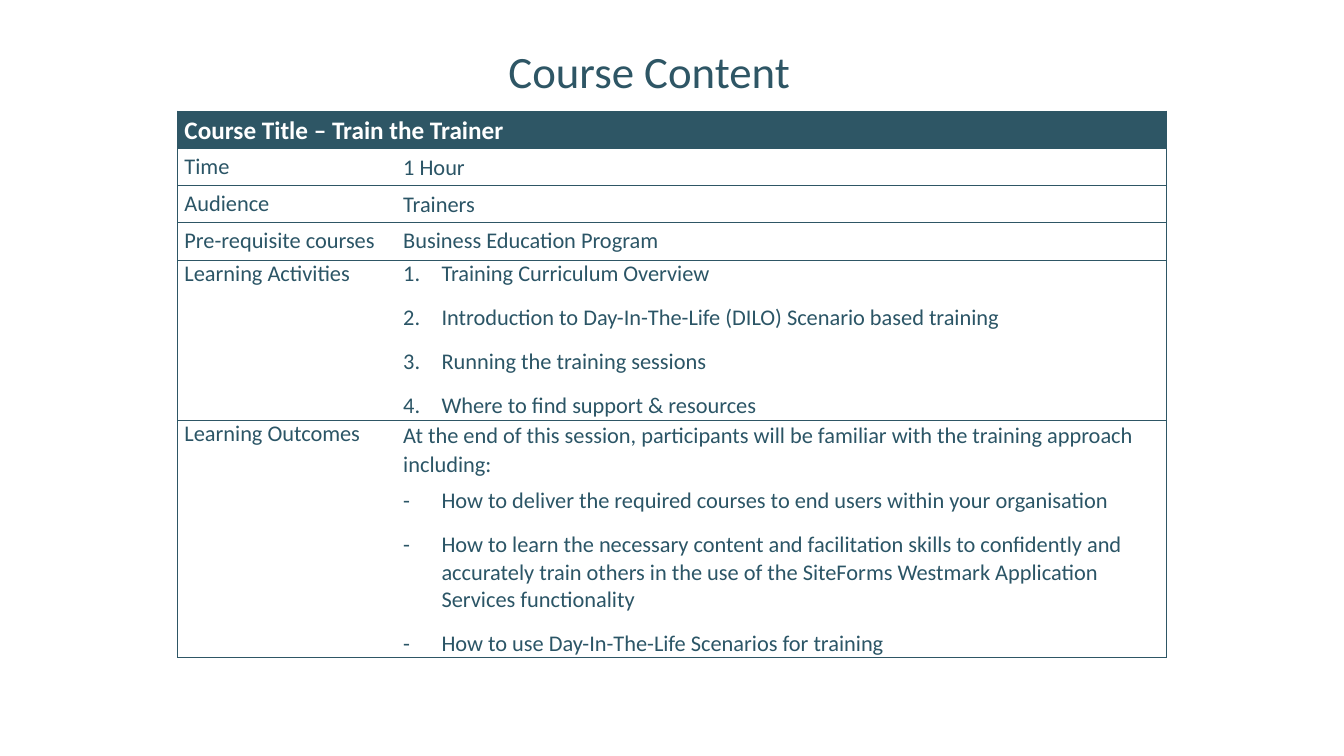
"""Build the course content slide with its course outline table."""
from lxml.etree import SubElement
from pptx import Presentation
from pptx.dml.color import RGBColor
from pptx.enum.text import MSO_ANCHOR, PP_ALIGN
from pptx.oxml.ns import qn
from pptx.util import Pt

EMU_PER_PX = 9144
COLORS = {"teal": "2E5665", "body": "2B5566", "white": "FFFFFF"}
PLAIN = {"space_after": Pt(3)}
LOOSE = {"line_spacing": 1.07}
LIST = {"space_before": Pt(6), "space_after": Pt(6)}


def px(n):
    return n * EMU_PER_PX


class SlideBuilder:
    def __init__(self, slide, font="Calibri"):
        self.slide = slide
        self.font = font

    def apply(self, target, values):
        for name, value in values.items():
            setattr(target, name, value)

    def bullet(self, p, mark):
        pPr = p._p.get_or_add_pPr()
        pPr.set("marL", str(px(38)))
        pPr.set("indent", str(-px(38)))
        if mark == "1.":
            SubElement(pPr, qn("a:buFont"), typeface="+mj-lt")
            SubElement(pPr, qn("a:buAutoNum"), type="arabicPeriod")
        else:
            SubElement(pPr, qn("a:buFont"), typeface=self.font)
            SubElement(pPr, qn("a:buChar"), char=mark)

    def text(self, tf, paragraphs, size, color, bold=False):
        for i, (words, mark, values) in enumerate(paragraphs):
            p = tf.add_paragraph() if i else tf.paragraphs[0]
            if mark:
                self.bullet(p, mark)
            self.apply(p, values)
            if i == 0:
                p.space_before = Pt(0)
            r = p.add_run()
            r.text = words
            self.apply(r.font, {"name": self.font, "size": Pt(size), "bold": bold})
            r.font.color.rgb = RGBColor.from_string(COLORS[color])

    def title(self, words, left, top, width, height):
        box = self.slide.shapes.add_textbox(px(left), px(top), px(width), px(height))
        tf = box.text_frame
        self.apply(tf, {"word_wrap": True, "vertical_anchor": MSO_ANCHOR.MIDDLE})
        values = {"alignment": PP_ALIGN.CENTER, "line_spacing": 0.9}
        self.text(tf, [(words, None, values)], 32, "teal")

    def borders(self, cell, sides):
        tcPr = cell._tc.get_or_add_tcPr()
        for side in "LRTB":
            ln = SubElement(tcPr, qn(f"a:ln{side}"), w=str(Pt(0.5)))
            if side in sides:
                fill = SubElement(ln, qn("a:solidFill"))
                SubElement(fill, qn("a:srgbClr"), val=COLORS["teal"])
            else:
                SubElement(ln, qn("a:noFill"))

    def cell(self, cell, sides, anchor, fill=None):
        self.apply(cell, {"margin_left": px(7), "margin_right": px(7),
                          "margin_top": 0, "margin_bottom": 0,
                          "vertical_anchor": anchor})
        self.borders(cell, sides)
        if fill:
            cell.fill.solid()
            cell.fill.fore_color.rgb = RGBColor.from_string(COLORS[fill])
        else:
            cell.fill.background()

    def table(self, heading, rows, left, top, widths, heights):
        frame = self.slide.shapes.add_table(
            len(heights), len(widths), px(left), px(top),
            px(sum(widths)), px(sum(heights)))
        table = frame.table
        self.apply(table, {"first_row": False, "horz_banding": False})
        for column, width in zip(table.columns, widths):
            column.width = px(width)
        for row, height in zip(table.rows, heights):
            row.height = px(height)
        header = table.cell(0, 0)
        header.merge(table.cell(0, 1))
        for column in range(2):
            self.cell(table.cell(0, column), "LRTB", MSO_ANCHOR.MIDDLE, "teal")
        self.text(header.text_frame, [(heading, None, {**PLAIN, **LOOSE})],
                  18, "white", True)
        for i, (label, details) in enumerate(rows, 1):
            anchor = MSO_ANCHOR.TOP if len(details) > 1 else MSO_ANCHOR.MIDDLE
            contents = ([(label, None, PLAIN)], details)
            for j, (sides, content) in enumerate(zip(("LTB", "RTB"), contents)):
                cell = table.cell(i, j)
                self.cell(cell, sides, anchor)
                self.text(cell.text_frame, content, 16, "body")


def main():
    prs = Presentation()
    prs.slide_width, prs.slide_height = px(1333), px(750)
    builder = SlideBuilder(prs.slides.add_slide(prs.slide_layouts[6]))
    activities = [
        "Training Curriculum Overview",
        "Introduction to Day-In-The-Life (DILO) Scenario based training",
        "Running the training sessions",
        "Where to find support & resources",
    ]
    outcomes = [
        "How to deliver the required courses to end users within your organisation",
        "How to learn the necessary content and facilitation skills to confidently "
        "and accurately train others in the use of the SiteForms Westmark "
        "Application Services functionality",
        "How to use Day-In-The-Life Scenarios for training",
    ]
    intro = ("At the end of this session, participants will be familiar with "
             "the training approach including:")
    rows = [
        ("Time", [("1 Hour", None, {**PLAIN, **LOOSE})]),
        ("Audience", [("Trainers", None, LOOSE)]),
        ("Pre-requisite courses", [("Business Education Program", None, LIST)]),
        ("Learning Activities", [(item, "1.", LIST) for item in activities]),
        ("Learning Outcomes",
         [(intro, None, LOOSE)] + [(item, "-", LIST) for item in outcomes]),
    ]
    builder.table("Course Title – Train the Trainer", rows, 176, 110,
                  [217, 764], [37] * 4 + [159, 235])
    builder.title("Course Content", 69, 36, 1150, 74)
    prs.save("out.pptx")


if __name__ == "__main__":
    main()
